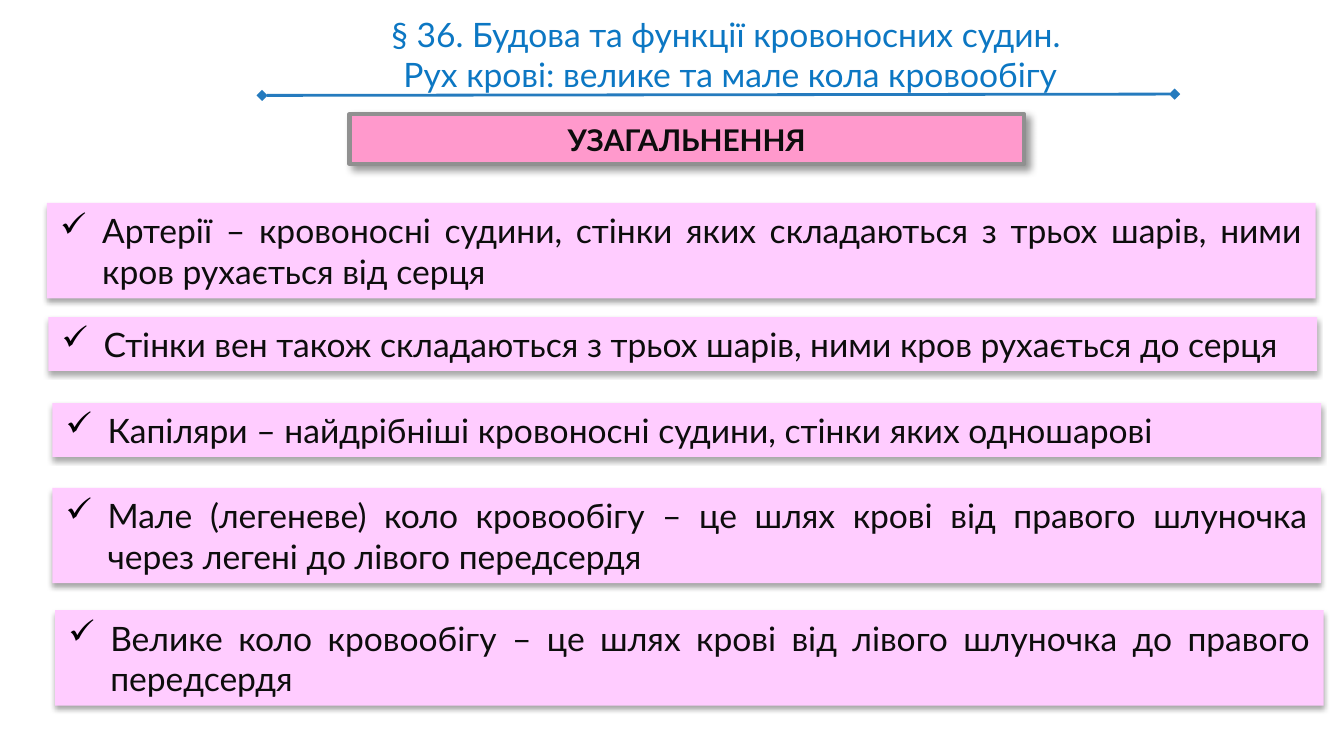
from lxml import etree
from pptx import Presentation
from pptx.dml.color import RGBColor
from pptx.enum import shapes, text
from pptx.oxml import ns
from pptx.util import Pt

FONT = "Lato"
INK = "0D0D0D"
ROWS = [
    (25.2, 108.72, 51.12, "Артерії – кровоносні судини, стінки яких складаються з трьох шарів, ними кров рухається від серця"),
    (25.92, 169.92, 28.8, "Стінки вен також складаються з трьох шарів, ними кров рухається до серця"),
    (28.08, 216, 28.8, "Капіляри – найдрібніші кровоносні судини, стінки яких одношарові"),
    (28.08, 261.36, 51.12, "Мале (легеневе) коло кровообігу – це шлях крові від правого шлуночка через легені до лівого передсердя"),
    (29.52, 326.88, 51.12, "Велике коло кровообігу – це шлях крові від лівого шлуночка до правого передсердя"),
]


def color(value):
    """Turn a hex string into a colour."""
    return RGBColor.from_string(value)


def child(parent, tag, **attrs):
    """Append a DrawingML element and return it."""
    node = etree.SubElement(parent, ns.qn("a:" + tag))
    for name, value in attrs.items():
        node.set(name, str(value))
    return node


def add_shadow(sp, alpha, blur, dist, angle):
    """Give a shape a black outer shadow."""
    sp.shadow.inherit = False
    effects = sp._element.spPr.find(ns.qn("a:effectLst"))
    shadow = child(effects, "outerShdw", blurRad=Pt(blur), dist=Pt(dist),
                   dir=angle * 60000, algn="t", rotWithShape=0)
    child(child(shadow, "srgbClr", val="000000"), "alpha", val=alpha * 1000)


def add_text(p, words, size, ink, bold=False):
    """Add one formatted run to a paragraph."""
    r = p.add_run()
    r.text = words
    r.font.name, r.font.size, r.font.bold = FONT, Pt(size), bold
    r.font.color.rgb = color(ink)


def add_panel(parent, box, fill):
    """Place a filled rectangle that grows with its text."""
    sp = parent.add_shape(shapes.MSO_SHAPE.RECTANGLE, *map(Pt, box))
    sp.fill.solid()
    sp.fill.fore_color.rgb = color(fill)
    sp.line.fill.background()
    sp.text_frame.word_wrap = True
    sp.text_frame.auto_size = text.MSO_AUTO_SIZE.SHAPE_TO_FIT_TEXT
    return sp


def add_statement(parent, box, words):
    """Place a pink panel with a ticked, justified statement."""
    sp = add_panel(parent, box, "FFCCFF")
    add_shadow(sp, 35, 3.1, 1.8, 90)
    p = sp.text_frame.paragraphs[0]
    p.alignment = text.PP_ALIGN.JUSTIFY
    props = p._p.get_or_add_pPr()
    props.set("marL", str(Pt(22.5)))
    props.set("indent", str(Pt(-22.5)))
    child(child(props, "buClr"), "srgbClr", val="000000")
    child(props, "buChar", char="✓")
    add_text(p, words, 18, INK)


def add_banner(s, box, words):
    """Place the bordered section banner."""
    sp = add_panel(s.shapes, box, "FF99CC")
    sp.line.color.rgb = color("909090")
    sp.line.width = Pt(2.25)
    add_shadow(sp, 40, 4, 3, 45)
    p = sp.text_frame.paragraphs[0]
    p.alignment = text.PP_ALIGN.CENTER
    add_text(p, words, 16, INK, True)


def add_title(s, box, lines):
    """Place the centred title over its diamond-ended rule."""
    x, y, w, h = box
    rule = s.shapes.add_connector(shapes.MSO_CONNECTOR.STRAIGHT, Pt(x + 17.28), Pt(y + 51.12),
                                  Pt(x + w - 30.24), Pt(y + 50.4))
    rule.line.color.rgb = color("257BBE")
    rule.line.width = Pt(1.5)
    for end in ("headEnd", "tailEnd"):
        child(rule.line._get_or_add_ln(), end, type="diamond")
    child(rule._element.spPr, "effectLst")
    tf = s.shapes.add_textbox(*map(Pt, box)).text_frame
    tf.word_wrap = True
    tf.auto_size = text.MSO_AUTO_SIZE.SHAPE_TO_FIT_TEXT
    tf.margin_left = tf.margin_right = tf.margin_top = tf.margin_bottom = Pt(7.2)
    for i, line in enumerate(lines):
        p = tf.add_paragraph() if i else tf.paragraphs[0]
        p.alignment = text.PP_ALIGN.CENTER
        add_text(p, line, 18, "0C77C3")


def main():
    """Build the summary slide and save it."""
    prs = Presentation()
    prs.slide_width, prs.slide_height = Pt(720), Pt(405)
    s = prs.slides.add_slide(prs.slide_layouts[6])
    statements = s.shapes.add_group_shape().shapes
    for x, y, h, words in ROWS:
        add_statement(statements, (x, y, 679.68, h), words)
    add_banner(s, (187.2, 61.2, 361.44, 26.64), "УЗАГАЛЬНЕННЯ")
    add_title(s, (123.12, 0, 536.4, 58.32),
              ["§ 36. Будова та функції кровоносних судин. ",
               "Рух крові: велике та мале кола кровообігу"])
    prs.save("out.pptx")


if __name__ == "__main__":
    main()
